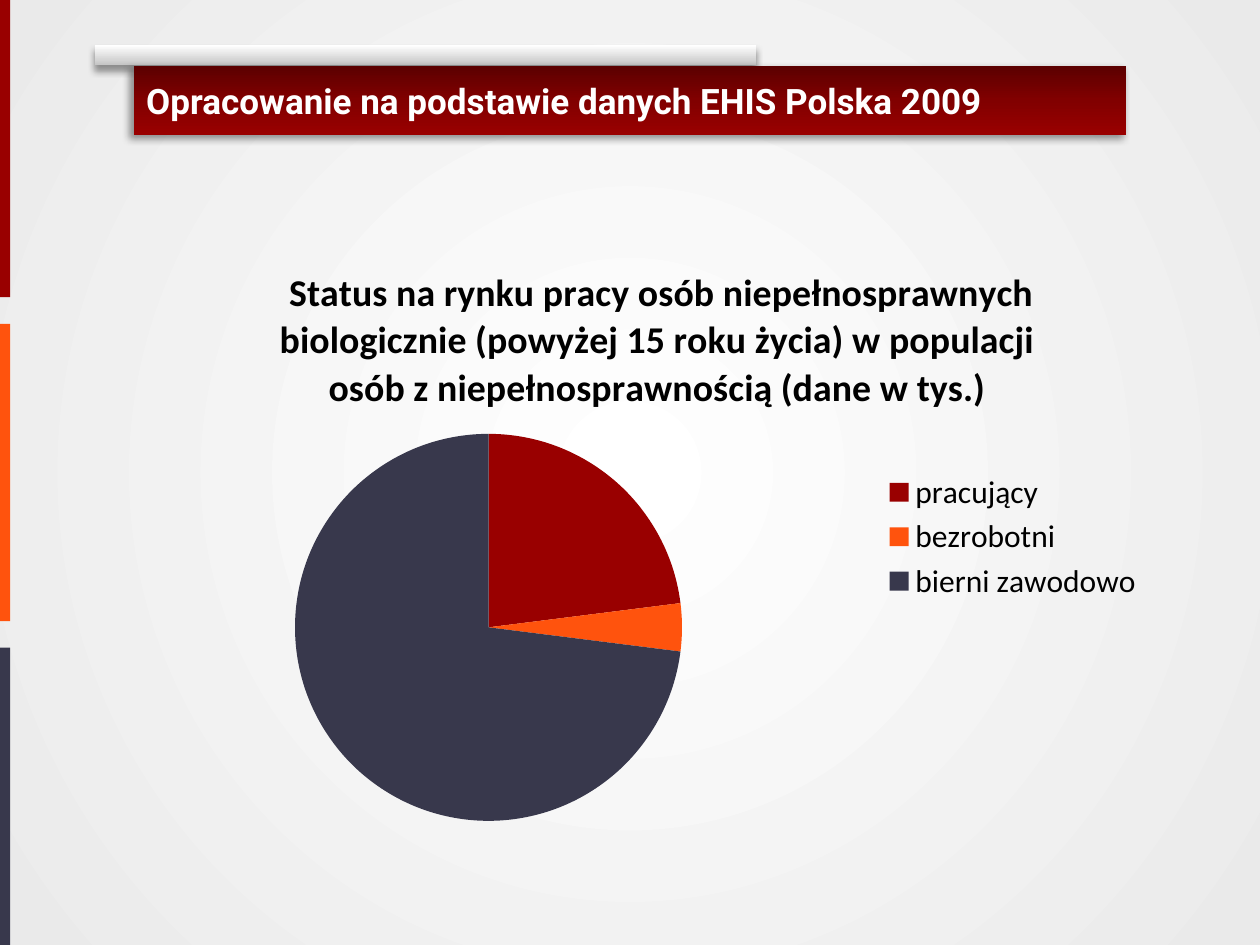
from lxml import etree
from pptx import Presentation
from pptx import util as u
from pptx.chart.data import CategoryChartData
from pptx.dml.color import RGBColor
from pptx.enum import chart as ch, shapes, text
from pptx.oxml import parse_xml
from pptx.oxml.ns import qn

HUES = {"red": "990000", "orange": "FF530D", "slate": "38384C",
        "mid": "810000", "dark": "5B0000", "grey": "C4C4C4",
        "pale": "EAEAEA", "white": "FFFFFF", "black": "000000"}
NS = 'xmlns:a="http://schemas.openxmlformats.org/drawingml/2006/main"'
BANDS = ("red", "orange", "slate")
HEAD = "Opracowanie na podstawie danych EHIS Polska 2009"
NAME = (" Status na rynku pracy osób niepełnosprawnych biologicznie "
        "(powyżej 15 roku życia) w populacji osób z niepełnosprawnością "
        "(dane w tys.)")
DATA = {"pracujący": 23, "bezrobotni": 4, "bierni zawodowo": 73}


def tint(key):
    return RGBColor.from_string(HUES[key])


def blend(stops, way):
    marks = "".join(f'<a:gs pos="{pos * 1000}"><a:srgbClr val="{HUES[key]}"/></a:gs>'
                    for pos, key in stops)
    return parse_xml(f'<a:gradFill {NS} rotWithShape="1">'
                     f'<a:gsLst>{marks}</a:gsLst>{way}</a:gradFill>')


def slope(angle):
    return f'<a:lin ang="{angle * 60000}" scaled="0"/>'


def shade(angle):
    return parse_xml(
        f'<a:effectLst {NS}><a:outerShdw blurRad="50800" dist="38100" '
        f'dir="{angle * 60000}" algn="t" rotWithShape="0">'
        f'<a:srgbClr val="{HUES["black"]}"><a:alpha val="40000"/></a:srgbClr>'
        '</a:outerShdw></a:effectLst>')


def block(slide, left, top, width, height):
    shape = slide.shapes.add_shape(shapes.MSO_SHAPE.RECTANGLE,
                                   left, top, width, height)
    shape.shadow.inherit = False
    shape.line.fill.background()
    return shape


def backdrop(slide):
    slide.background.fill.solid()
    props = slide.background.fill._xPr
    way = ('<a:path path="circle"><a:fillToRect l="50000" t="50000" '
           'r="50000" b="50000"/></a:path>')
    props.replace(props.find(qn("a:solidFill")),
                  blend([(0, "white"), (100, "pale")], way))


def stripe(slide, left, top, width, height):
    gap = u.Inches(0.21)
    size = (height - gap * (len(BANDS) - 1)) // len(BANDS)
    for row, key in enumerate(BANDS):
        band = block(slide, left, top + row * (size + gap), width, size)
        band.fill.solid()
        band.fill.fore_color.rgb = tint(key)


def header(slide, left, top, width, height):
    lip = u.Inches(0.16)
    inset = u.Inches(0.31)
    tab = block(slide, left, top, u.Inches(5.25), lip)
    props = tab._element.spPr
    props.find(qn("a:prstGeom")).addnext(
        blend([(0, "grey"), (100, "white")], slope(270)))
    props.replace(props.find(qn("a:effectLst")), shade(90))

    title = slide.shapes.title
    title.left, title.top = left + inset, top + lip
    title.width, title.height = width - inset, height - lip
    props = title._element.spPr
    props.append(blend([(0, "dark"), (50, "mid"), (100, "red")], slope(90)))
    props.append(shade(135))
    slide.shapes._spTree.append(title._element)
    frame = title.text_frame
    frame.text = HEAD
    frame.word_wrap = True
    frame.auto_size = text.MSO_AUTO_SIZE.NONE
    frame.vertical_anchor = text.MSO_ANCHOR.MIDDLE
    line = frame.paragraphs[0]
    line.alignment = text.PP_ALIGN.LEFT
    style(line.runs[0].font, "Roboto", 20, "white", True)


def style(font, name, size, key, bold=False):
    font.name = name
    font.size = u.Pt(size)
    font.bold = bold
    font.color.rgb = tint(key)


def layout(host, after, inner=False, **parts):
    old = host.find(qn("c:layout"))
    if old is not None:
        host.remove(old)
    box = etree.Element(qn("c:layout"))
    manual = etree.SubElement(box, qn("c:manualLayout"))
    if inner:
        etree.SubElement(manual, qn("c:layoutTarget")).set("val", "inner")
    for side in "xy":
        etree.SubElement(manual, qn(f"c:{side}Mode")).set("val", "edge")
    for side, part in parts.items():
        etree.SubElement(manual, qn(f"c:{side}")).set("val", str(part))
    if after is None:
        host.insert(0, box)
    else:
        after.addnext(box)


def pie(slide, left, top, width, height):
    data = CategoryChartData()
    data.categories = list(DATA)
    data.add_series(NAME, list(DATA.values()))
    chart = slide.shapes.add_chart(ch.XL_CHART_TYPE.PIE, left, top,
                                   width, height, data).chart
    style(chart.font, "Calibri", 18, "black")
    chart.has_title = True
    frame = chart.chart_title.text_frame
    frame.text = NAME
    style(frame.paragraphs[0].runs[0].font, "Calibri", 21.6, "black", True)
    head = chart.chart_title._element
    layout(head, head.find(qn("c:tx")), x=0.16, y=0.04)

    chart.has_legend = True
    chart.legend.position = ch.XL_LEGEND_POSITION.RIGHT
    chart.legend.include_in_layout = False
    plot = chart.plots[0]
    plot.vary_by_categories = True
    for spot, key in enumerate(BANDS):
        fill = plot.series[0].points[spot].format.fill
        fill.solid()
        fill.fore_color.rgb = tint(key)
    area = chart._chartSpace.find(".//" + qn("c:plotArea"))
    layout(area, None, True, x=0.18, y=0.33, w=0.37, h=0.64)


def main():
    deck = Presentation()
    deck.slide_width, deck.slide_height = u.Inches(10), u.Inches(7.5)
    slide = deck.slides.add_slide(deck.slide_layouts[5])
    backdrop(slide)
    stripe(slide, 0, 0, u.Inches(0.08), deck.slide_height)
    header(slide, u.Inches(0.75), u.Inches(0.36), u.Inches(8.19), u.Inches(0.71))
    pie(slide, u.Inches(0.83), u.Inches(1.86), u.Inches(8.35), u.Inches(4.8))
    deck.save("out.pptx")


if __name__ == "__main__":
    main()
